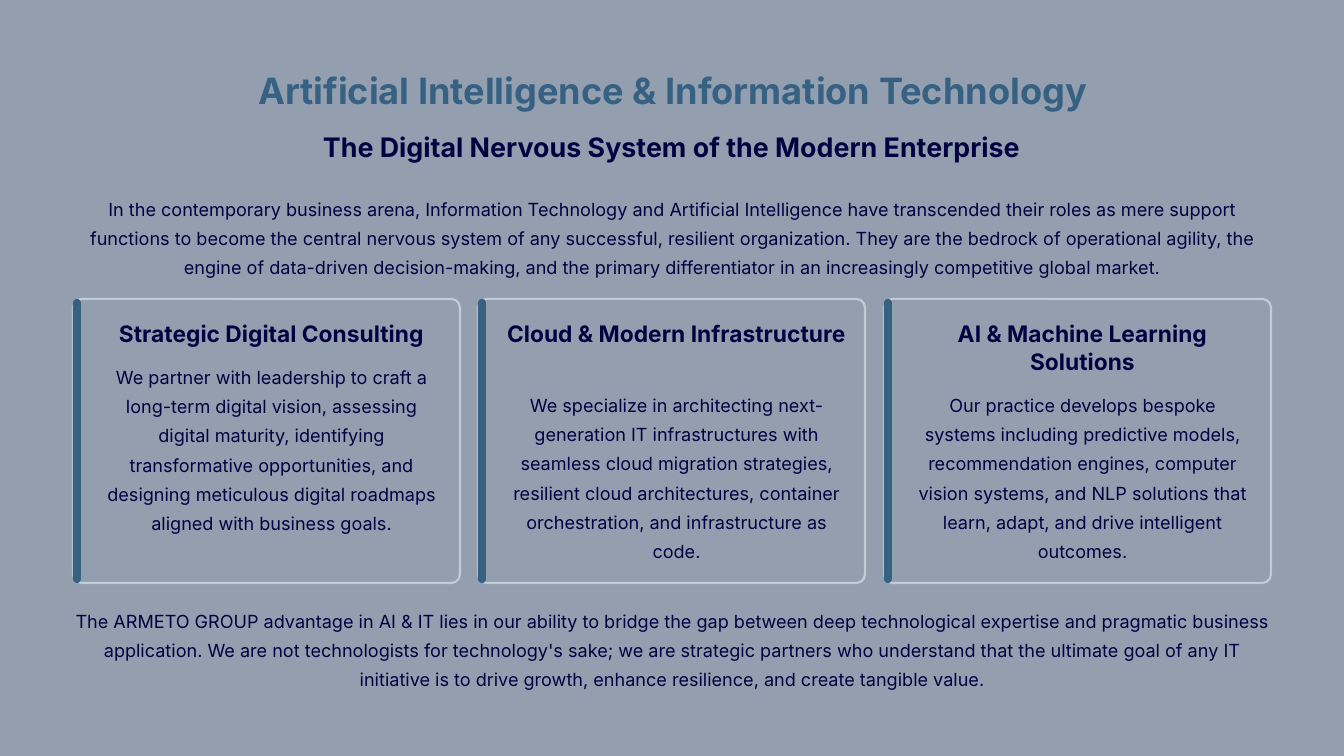
from dataclasses import dataclass

from pptx import Presentation
from pptx import util as u
from pptx.dml.color import RGBColor
from pptx.enum import shapes, text

SLATE = RGBColor(0x93, 0x9F, 0xAF)
STEEL = RGBColor(0x36, 0x61, 0x83)
NAVY = RGBColor(0x01, 0x01, 0x41)
MIST = RGBColor(0xC1, 0xCD, 0xD6)

PX_PER_INCH = 84
SLIDE_W, SLIDE_H = 1344, 756
MARGIN = 73
CONTENT_W = SLIDE_W - 2 * MARGIN
CARD_TOP, CARD_W, CARD_H = 299, 387, 284
ACCENT_W = 8
CARD_INSET = 29
HEADING_TOP, HEADING_LINE_H, HEADING_GAP = 319, 28, 12
CARD_BODY_H = 175


@dataclass(frozen=True)
class Box:
    left: int
    top: int
    width: int
    height: int

    def emu(self) -> list[int]:
        return [px(n) for n in (self.left, self.top, self.width, self.height)]


@dataclass(frozen=True)
class TextStyle:
    size: float
    line_pt: int
    color: RGBColor = NAVY
    bold: bool = False
    wrap: bool = True


@dataclass(frozen=True)
class Card:
    heading: str
    heading_lines: int
    body: str


TITLE = TextStyle(31, 39, STEEL, bold=True, wrap=False)
SUBTITLE = TextStyle(23, 29, bold=True, wrap=False)
HEADING = TextStyle(19.5, 24, bold=True)
BODY = TextStyle(15.5, 25)

PASSAGES = [
    (Box(254, 66, 837, 45), TITLE, "Artificial Intelligence & Information Technology"),
    (Box(317, 129, 710, 34), SUBTITLE, "The Digital Nervous System of the Modern Enterprise"),
    (Box(MARGIN, 191, CONTENT_W, 87), BODY,
     "In the contemporary business arena, Information Technology and Artificial "
     "Intelligence have transcended their roles as mere support functions to become "
     "the central nervous system of any successful, resilient organization. They are "
     "the bedrock of operational agility, the engine of data-driven decision-making, "
     "and the primary differentiator in an increasingly competitive global market."),
    (Box(MARGIN, 603, CONTENT_W, 87), BODY,
     "The ARMETO GROUP advantage in AI & IT lies in our ability to bridge the gap "
     "between deep technological expertise and pragmatic business application. We are "
     "not technologists for technology's sake; we are strategic partners who understand "
     "that the ultimate goal of any IT initiative is to drive growth, enhance "
     "resilience, and create tangible value."),
]

CARDS = [
    Card("Strategic Digital Consulting", 1,
         "We partner with leadership to craft a long-term digital vision, assessing "
         "digital maturity, identifying transformative opportunities, and designing "
         "meticulous digital roadmaps aligned with business goals."),
    Card("Cloud & Modern Infrastructure", 2,
         "We specialize in architecting next-generation IT infrastructures with seamless "
         "cloud migration strategies, resilient cloud architectures, container "
         "orchestration, and infrastructure as code."),
    Card("AI & Machine Learning Solutions", 2,
         "Our practice develops bespoke systems including predictive models, "
         "recommendation engines, computer vision systems, and NLP solutions that learn, "
         "adapt, and drive intelligent outcomes."),
]


def px(length: int) -> int:
    return round(length * u.Inches(1) / PX_PER_INCH)


def add_passage(slide, box: Box, style: TextStyle, wording: str) -> None:
    frame = slide.shapes.add_textbox(*box.emu()).text_frame
    frame.word_wrap = style.wrap
    for side in ("left", "top", "right", "bottom"):
        setattr(frame, f"margin_{side}", 0)
    paragraph = frame.paragraphs[0]
    paragraph.alignment = text.PP_ALIGN.CENTER
    paragraph.line_spacing = u.Pt(style.line_pt)
    run = paragraph.add_run()
    run.text = wording
    font_format = {"name": "Inter", "size": u.Pt(style.size), "bold": style.bold}
    for attribute, value in font_format.items():
        setattr(run.font, attribute, value)
    run.font.color.rgb = style.color


def add_panel(slide, box: Box, rounding: float, fill: RGBColor,
              border: RGBColor | None = None) -> None:
    panel = slide.shapes.add_shape(shapes.MSO_SHAPE.ROUNDED_RECTANGLE, *box.emu())
    panel.adjustments[0] = rounding
    panel.shadow.inherit = False
    panel.fill.solid()
    panel.fill.fore_color.rgb = fill
    if border is None:
        panel.line.fill.background()
    else:
        panel.line.color.rgb = border
        panel.line.width = u.Pt(1.8)


def add_card(slide, left: int, card: Card) -> None:
    add_panel(slide, Box(left, CARD_TOP, CARD_W, CARD_H), 0.03, SLATE, MIST)
    add_panel(slide, Box(left, CARD_TOP, ACCENT_W, CARD_H), 0.5, STEEL)
    text_left, text_w = left + CARD_INSET, CARD_W - 2 * CARD_INSET + 10
    heading_h = card.heading_lines * HEADING_LINE_H
    body_top = HEADING_TOP + heading_h + HEADING_GAP
    add_passage(slide, Box(text_left, HEADING_TOP, text_w, heading_h), HEADING, card.heading)
    add_passage(slide, Box(text_left, body_top, text_w, CARD_BODY_H), BODY, card.body)


def main() -> None:
    deck = Presentation()
    deck.slide_width, deck.slide_height = px(SLIDE_W), px(SLIDE_H)
    slide = deck.slides.add_slide(deck.slide_layouts[6])
    slide.background.fill.solid()
    slide.background.fill.fore_color.rgb = SLATE

    for box, style, wording in PASSAGES:
        add_passage(slide, box, style, wording)
    for column, card in enumerate(CARDS):
        left = MARGIN + column * (CONTENT_W - CARD_W) // (len(CARDS) - 1)
        add_card(slide, left, card)

    deck.save("out.pptx")


if __name__ == "__main__":
    main()
